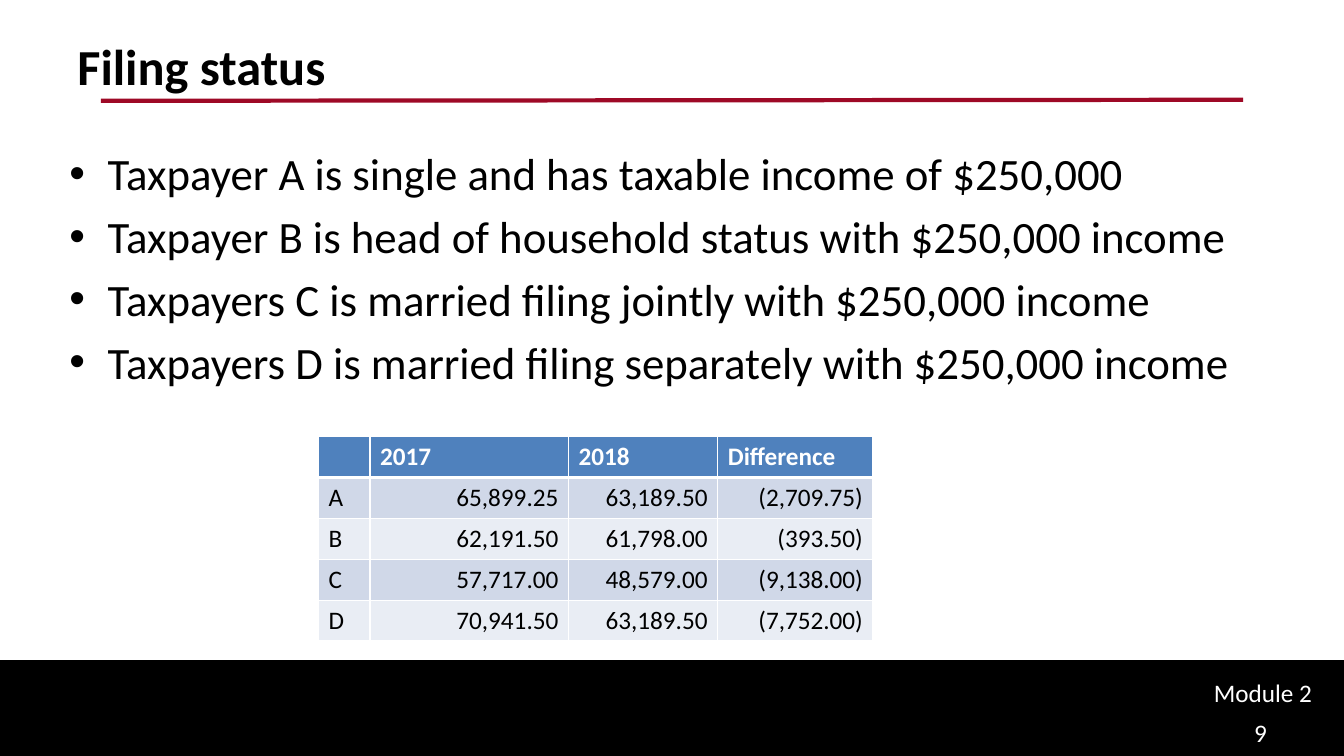
from lxml import etree
from pptx import Presentation
from pptx.dml.color import RGBColor
from pptx.enum import shapes, text
from pptx.oxml import ns
from pptx.util import Inches, Pt


def color(hex_string):
    return RGBColor.from_string(hex_string)


def add_text(left, top, width, height, lines, size, hex_string, bold=False):
    box = slide.shapes.add_textbox(Inches(left), Inches(top), Inches(width), Inches(height))
    box.text_frame.word_wrap = True
    box.text_frame.text = "\n".join(lines)
    for paragraph in box.text_frame.paragraphs:
        for run in paragraph.runs:
            run.font.name = "Calibri"
            run.font.size = Pt(size)
            run.font.bold = bold
            run.font.color.rgb = color(hex_string)
    return box


presentation = Presentation()
presentation.slide_width = Inches(13.33)
presentation.slide_height = Inches(7.5)
slide = presentation.slides.add_slide(presentation.slide_layouts[6])

# Footer band
band = slide.shapes.add_shape(
    shapes.MSO_SHAPE.RECTANGLE, Inches(0), Inches(6.56), Inches(13.33), Inches(0.94))
band.shadow.inherit = False
band.fill.solid()
band.fill.fore_color.rgb = color("000000")
band.line.color.rgb = color("000000")
band.line.width = Pt(2)

# Rule under the title
rule = slide.shapes.add_connector(
    shapes.MSO_CONNECTOR.STRAIGHT, Inches(1), Inches(1), Inches(12.33), Inches(0.99))
rule.line.color.rgb = color("9E0926")
rule.line.width = Pt(3)
etree.SubElement(rule._element.spPr, ns.qn("a:effectLst"))

# Title and bullets
add_text(0.67, 0.3, 12, 1.25, ["Filing status"], 36, "000000", bold=True)
taxpayers = [
    "Taxpayer A is single and has taxable income of $250,000",
    "Taxpayer B is head of household status with $250,000 income",
    "Taxpayers C is married filing jointly with $250,000 income",
    "Taxpayers D is married filing separately with $250,000 income",
]
body = add_text(0.59, 1.4, 12.08, 4.64, taxpayers, 32, "000000")
for index, paragraph in enumerate(body.text_frame.paragraphs):
    properties = paragraph._p.get_or_add_pPr()
    properties.set("marL", str(Inches(0.38)))
    properties.set("indent", str(-Inches(0.38)))
    etree.SubElement(properties, ns.qn("a:buFont"), typeface="Arial")
    etree.SubElement(properties, ns.qn("a:buChar"), char="•")
    if index:
        paragraph.space_before = Pt(6.4)

# Footer text
add_text(11.94, 6.67, 1.32, 0.4, ["Module 2"], 18, "FFFFFF")
add_text(12.34, 7.07, 0.91, 0.43, ["9"], 18, "FFFFFF")

# Tax table
tax_rows = [
    ["", "2017", "2018", "Difference"],
    ["A", "65,899.25", "63,189.50", "(2,709.75)"],
    ["B", "62,191.50", "61,798.00", "(393.50)"],
    ["C", "57,717.00", "48,579.00", "(9,138.00)"],
    ["D", "70,941.50", "63,189.50", "(7,752.00)"],
]
table = slide.shapes.add_table(
    5, 4, Inches(3.16), Inches(4.33), Inches(5.5), Inches(2.03)).table
for column, width in zip(table.columns, [0.51, 1.97, 1.48, 1.54]):
    column.width = Inches(width)

for row_index, values in enumerate(tax_rows):
    header = row_index == 0
    row_fill = "4F81BD" if header else ("E9EDF4", "D0D8E8")[row_index % 2]
    for column_index, value in enumerate(values):
        cell = table.cell(row_index, column_index)
        cell.text_frame.text = value
        paragraph = cell.text_frame.paragraphs[0]
        paragraph.font.size = Pt(18)
        if not header and column_index:
            paragraph.alignment = text.PP_ALIGN.RIGHT
        for run in paragraph.runs:
            run.font.name = "Calibri"
            run.font.size = Pt(18)
            run.font.bold = header
            run.font.color.rgb = color("FFFFFF" if header else "000000")

        # White borders, heavier below the header
        cell_properties = cell._tc.get_or_add_tcPr()
        for side in "LRTB":
            heavy = (row_index, side) in [(0, "B"), (1, "T")]
            border = etree.SubElement(
                cell_properties, ns.qn("a:ln" + side), w=str(Pt(3 if heavy else 1)))
            border_fill = etree.SubElement(border, ns.qn("a:solidFill"))
            etree.SubElement(border_fill, ns.qn("a:srgbClr"), val="FFFFFF")
        cell.fill.solid()
        cell.fill.fore_color.rgb = color(row_fill)

presentation.save("out.pptx")
